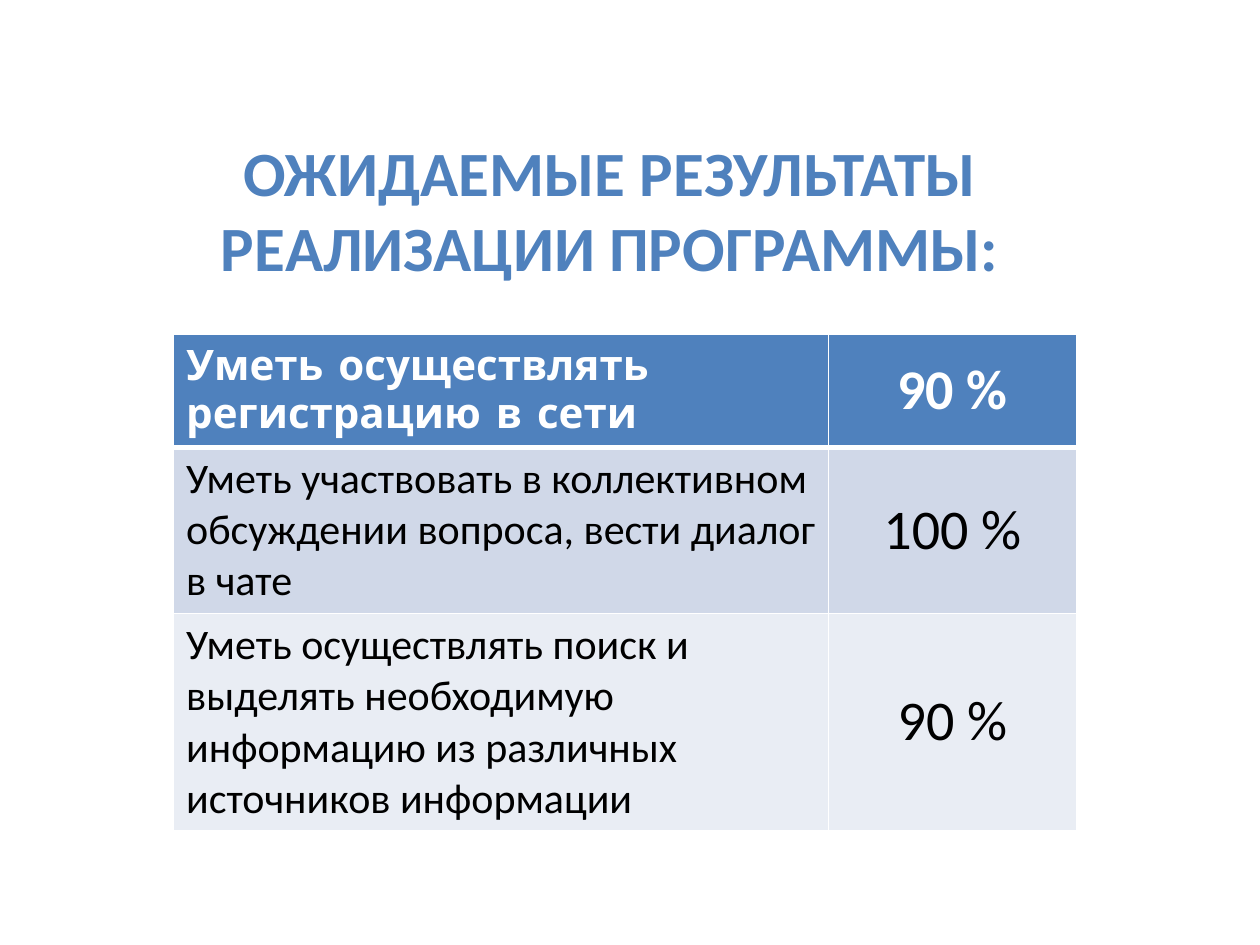
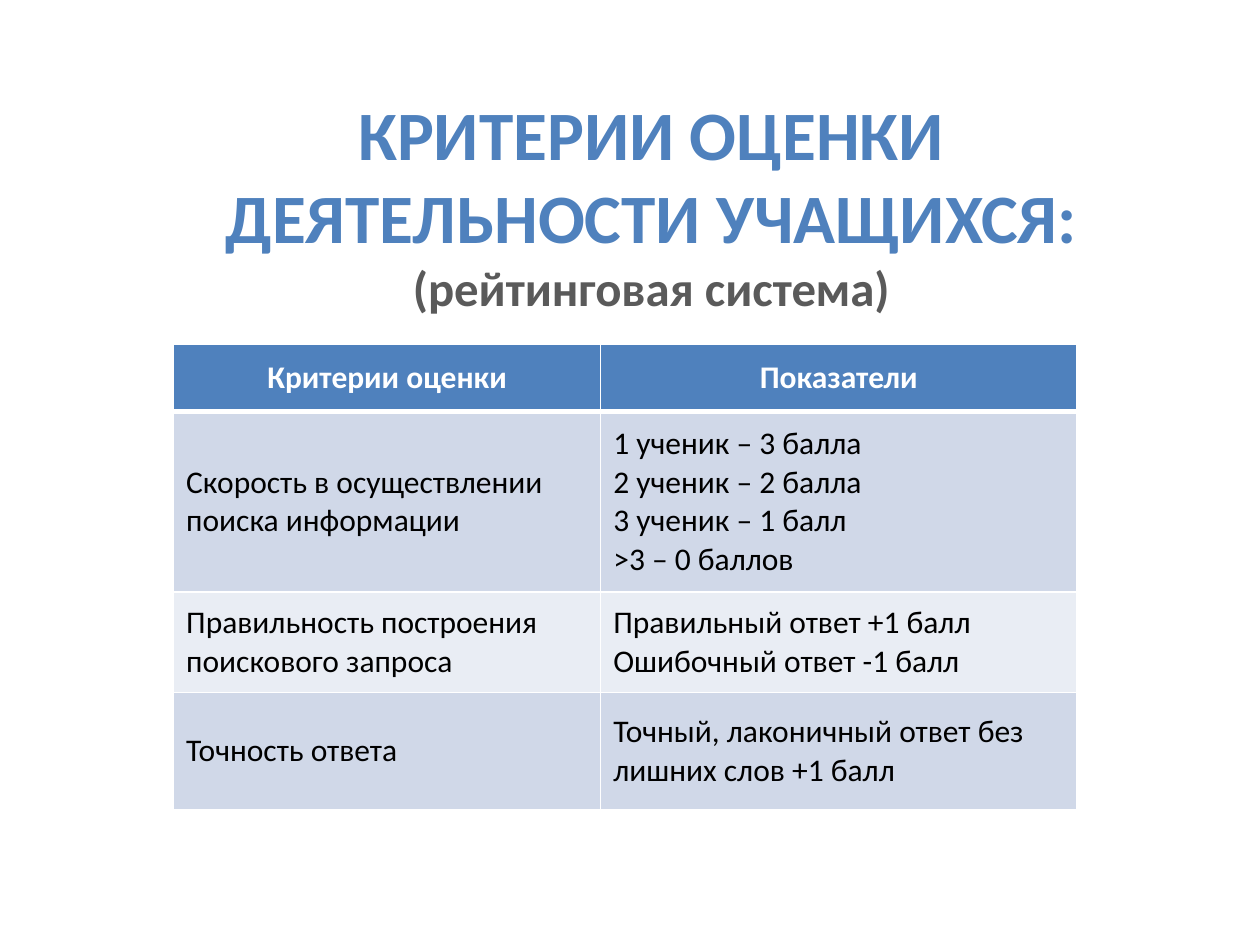
from pptx import Presentation
from pptx import util as u
from pptx.dml import color
from pptx.enum import text
from lxml import etree

BLUE, WHITE, BLACK, GREY = "4F81BD", "FFFFFF", "000000", "5A5A5A"
BANDS = ["E9EDF4", "D0D8E8"]
FONT = "Calibri"
LEFT, MID = text.PP_ALIGN.LEFT, text.PP_ALIGN.CENTER
NS = "http://schemas.openxmlformats.org/drawingml/2006/main"


def rgb(code):
    return color.RGBColor.from_string(code)


def style(run, size, code, bold, face=FONT):
    font = run.font
    font.size, font.bold, font.name = u.Pt(size), bold, face
    font.color.rgb = rgb(code)


# Content: box and table places in cm, title runs as (size, colour)
pages = [
    dict(
        box=(3.1, 2.51, 18.39, 3.4),
        title="ОЖИДАЕМЫЕ РЕЗУЛЬТАТЫ РЕАЛИЗАЦИИ ПРОГРАММЫ:",
        looks=[(36, BLUE)],
        top=6.73, cols=[13.2, 5], rows=[2.2, 3.35, 4.37],
        sizes=[24, 32], head=[LEFT, MID], body=[LEFT, MID],
        faces=["Comic Neue", FONT],
        cells=[
            ["Уметь осуществлять регистрацию в сети", "90 %"],
            ["Уметь участвовать в коллективном обсуждении вопроса, "
             "вести диалог в чате", "100 %"],
            ["Уметь осуществлять поиск и выделять необходимую "
             "информацию из различных источников информации", "90 %"],
        ],
    ),
    dict(
        box=(1.7, 2.51, 22.86, 3.18),
        title="КРИТЕРИИ ОЦЕНКИ\vДЕЯТЕЛЬНОСТИ УЧАЩИХСЯ:\v(рейтинговая система)",
        looks=[(39.6, BLUE), (39.6, BLUE), (27.9, GREY)],
        top=6.93, cols=[8.61, 9.6], rows=[1.37, 3.63, 2.03, 2.36],
        sizes=[18, 18], head=[MID, MID], body=[LEFT, LEFT],
        faces=[FONT, FONT],
        cells=[
            ["Критерии оценки", "Показатели"],
            ["Скорость в осуществлении поиска информации",
             "1 ученик – 3 балла\n2 ученик – 2 балла\n"
             "3 ученик – 1 балл\n>3 – 0 баллов"],
            ["Правильность построения поискового запроса",
             "Правильный ответ +1 балл\nОшибочный ответ -1 балл"],
            ["Точность ответа",
             "Точный, лаконичный ответ без лишних слов +1 балл"],
        ],
    ),
]

prs = Presentation()
prs.slide_width, prs.slide_height = u.Cm(25.4), u.Cm(19.05)

for page in pages:
    slide = prs.slides.add_slide(prs.slide_layouts[6])

    # Title
    box = slide.shapes.add_textbox(*map(u.Cm, page["box"]))
    frame = box.text_frame
    frame.word_wrap = True
    frame.vertical_anchor = text.MSO_ANCHOR.MIDDLE
    para = frame.paragraphs[0]
    para.text = page["title"]
    para.alignment = MID
    for run, (size, code) in zip(para.runs, page["looks"]):
        style(run, size, code, True)

    # Table grid
    cols, rows = page["cols"], page["rows"]
    grid = slide.shapes.add_table(
        len(rows), len(cols), u.Cm(3.5), u.Cm(page["top"]),
        u.Cm(sum(cols)), u.Cm(sum(rows))).table
    for col, width in zip(grid.columns, cols):
        col.width = u.Cm(width)
    for row, height in zip(grid.rows, rows):
        row.height = u.Cm(height)

    # Cells
    for r, line in enumerate(page["cells"]):
        top = r == 0
        for c, words in enumerate(line):
            cell = grid.cell(r, c)
            cell.text_frame.text = words
            cell.vertical_anchor = text.MSO_ANCHOR.MIDDLE
            for para in cell.text_frame.paragraphs:
                para.alignment = page["head" if top else "body"][c]
                for run in para.runs:
                    style(run, page["sizes"][c], WHITE if top else BLACK,
                          top, page["faces"][c] if top else FONT)

            # White borders, thicker under the header
            props = cell._tc.get_or_add_tcPr()
            for side in "LRTB":
                thick = (r, side) in [(0, "B"), (1, "T")]
                edge = etree.SubElement(props, f"{{{NS}}}ln{side}",
                                        w=str(u.Pt(3 if thick else 1)))
                fill = etree.SubElement(edge, f"{{{NS}}}solidFill")
                etree.SubElement(fill, f"{{{NS}}}srgbClr", val=WHITE)
            cell.fill.solid()
            cell.fill.fore_color.rgb = rgb(BLUE if top else BANDS[r % 2])

prs.save("out.pptx")
